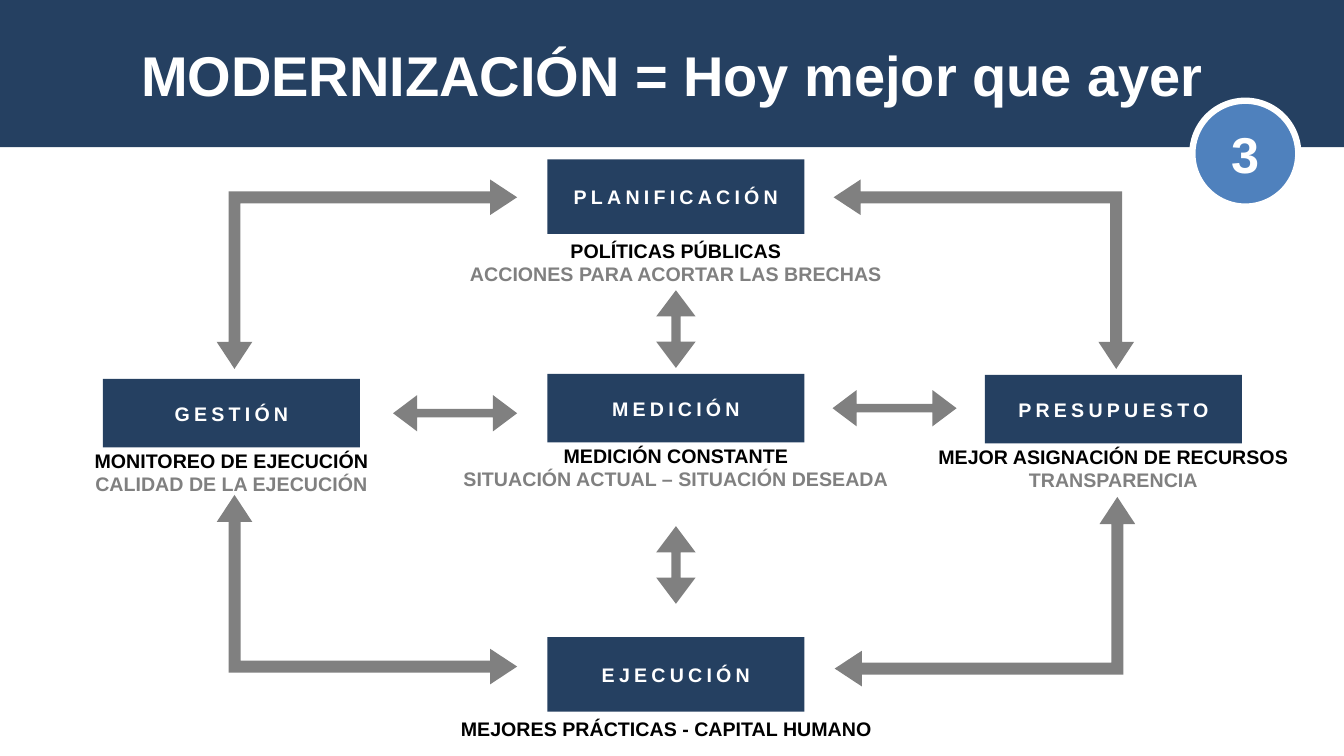
from dataclasses import dataclass

from pptx import Presentation
from pptx.dml.color import RGBColor
from pptx.enum.shapes import MSO_SHAPE
from pptx.enum.text import MSO_ANCHOR, PP_ALIGN
from pptx.oxml.ns import qn
from pptx.util import Inches, Pt

RECTANGLE, ELLIPSE = MSO_SHAPE.RECTANGLE, MSO_SHAPE.OVAL
CORNER, STRAIGHT = MSO_SHAPE.LEFT_UP_ARROW, MSO_SHAPE.LEFT_RIGHT_ARROW
LEFT, CENTER = PP_ALIGN.LEFT, PP_ALIGN.CENTER
TOP, MIDDLE = MSO_ANCHOR.TOP, MSO_ANCHOR.MIDDLE

FONT = "Arial"
NAVY, BLUE, GRAY, WHITE, BLACK = "254061", "4F81BD", "808080", "FFFFFF", "000000"

# The grid has 100 columns and 100 rows.
SLIDE_WIDTH, SLIDE_HEIGHT = Inches(13.33), Inches(7.5)
COLUMN, ROW = SLIDE_WIDTH / 100, SLIDE_HEIGHT / 100
LEFT_AXIS, MIDDLE_AXIS, RIGHT_AXIS = 17.22, 50.29, 82.84
BOX_WIDTH, TALL, SHORT = 19.13, 9.87, 9.07
LINE_HEIGHT, CAPTION_PADDING = 3.07, 1.46
BANNER_HEIGHT = 19.47


@dataclass
class Area:
    """A rectangle on the grid, given by its centre and size."""
    x: float
    y: float
    width: float
    height: float

    def bounds(self) -> tuple[int, int, int, int]:
        return (round((self.x - self.width / 2) * COLUMN),
                round((self.y - self.height / 2) * ROW),
                round(self.width * COLUMN), round(self.height * ROW))


@dataclass
class Step:
    title: str
    axis: float
    top: float
    height: float
    caption: list[str]
    caption_width: float
    caption_shift: float = 0
    overlap: float = 0


@dataclass
class ArrowStyle:
    kind: MSO_SHAPE
    width: float
    height: float
    adjustments: tuple[float, ...]


@dataclass
class Arrow:
    style: ArrowStyle
    x: float
    y: float
    rotation: int = 0
    flipped: bool = False


STEPS = [
    Step("PLANIFICACIÓN", MIDDLE_AXIS, 21.07, TALL,
         ["POLÍTICAS PÚBLICAS", "ACCIONES PARA ACORTAR LAS BRECHAS"], 49.2),
    Step("GESTIÓN", LEFT_AXIS, 50.13, SHORT,
         ["MONITOREO DE EJECUCIÓN", "CALIDAD DE LA EJECUCIÓN"], 25.13, overlap=0.53),
    Step("MEDICIÓN", MIDDLE_AXIS, 49.47, SHORT,
         ["MEDICIÓN CONSTANTE", "SITUACIÓN ACTUAL – SITUACIÓN DESEADA"], 34.8,
         overlap=0.53),
    Step("PRESUPUESTO", RIGHT_AXIS, 49.6, SHORT,
         ["MEJOR ASIGNACIÓN DE RECURSOS", "TRANSPARENCIA"], 27.75, overlap=0.53),
    Step("EJECUCIÓN", MIDDLE_AXIS, 84.27, TALL,
         ["MEJORES PRÁCTICAS - CAPITAL HUMANO"], 38.25, caption_shift=-0.71),
]

BENT = ArrowStyle(CORNER, 14.1, 39.73, (0.063, 0.094, 0.143))
ACROSS = ArrowStyle(STRAIGHT, 9.23, 4.8, (0.236, 0.665))
UPRIGHT = ArrowStyle(STRAIGHT, 5.78, 5.2, (0.236, 0.665))
ARROWS = [
    Arrow(BENT, 27.3, 36.27, 90, flipped=True),
    Arrow(BENT, 73.2, 36.27, 270),
    Arrow(BENT, 27.3, 78, 90),
    Arrow(BENT, 73.28, 78.27, 270, flipped=True),
    Arrow(ACROSS, 33.86, 54.67),
    Arrow(ACROSS, 66.56, 54),
    Arrow(UPRIGHT, MIDDLE_AXIS, 43.53, 90),
    Arrow(UPRIGHT, MIDDLE_AXIS, 74.73, 90),
]


def color(code: str) -> RGBColor:
    return RGBColor.from_string(code)


def write(box, lines: list[str], *, size: float = 14, colors: tuple[str, ...] = (WHITE,),
          align=CENTER, anchor=MIDDLE, wrap: bool = True, spacing: float = 0) -> None:
    """Fill a box with one paragraph per line; each line takes its own colour."""
    frame = box.text_frame
    frame.word_wrap = wrap
    frame.vertical_anchor = anchor
    for index, (line, code) in enumerate(zip(lines, colors)):
        para = frame.add_paragraph() if index else frame.paragraphs[0]
        para.alignment = align
        span = para.add_run()
        span.text = line
        span.font.name = FONT
        span.font.size = Pt(size)
        span.font.bold = True
        span.font.color.rgb = color(code)
        if spacing:
            span.font._element.set("spc", str(round(spacing * 100)))


def add_shape(page, kind, area: Area, fill: str):
    shape = page.shapes.add_shape(kind, *area.bounds())
    shape.shadow.inherit = False
    shape.fill.solid()
    shape.fill.fore_color.rgb = color(fill)
    shape.line.fill.background()
    return shape


def add_text(page, area: Area, lines: list[str], **text_format) -> None:
    write(page.shapes.add_textbox(*area.bounds()), lines, **text_format)


def add_step(page, step: Step) -> None:
    box_area = Area(step.axis, step.top + step.height / 2, BOX_WIDTH, step.height)
    write(add_shape(page, RECTANGLE, box_area, NAVY), [step.title], spacing=3)
    height = len(step.caption) * LINE_HEIGHT + CAPTION_PADDING
    caption_top = step.top + step.height - step.overlap
    caption_area = Area(step.axis + step.caption_shift, caption_top + height / 2,
                        step.caption_width, height)
    add_text(page, caption_area, step.caption, colors=(BLACK, GRAY), anchor=TOP)


def add_arrow(page, arrow: Arrow) -> None:
    style = arrow.style
    shape = add_shape(page, style.kind,
                      Area(arrow.x, arrow.y, style.width, style.height), GRAY)
    for index, value in enumerate(style.adjustments):
        shape.adjustments[index] = value
    shape.rotation = arrow.rotation
    if arrow.flipped:
        shape._element.spPr.find(qn("a:xfrm")).set("flipH", "1")


def add_badge(page, number: str) -> None:
    x, y = 92.66, 20.33
    circle = add_shape(page, ELLIPSE, Area(x, y, 7.88, 14), BLUE)
    circle.line.color.rgb = color(WHITE)
    circle.line.width = Pt(4.5)
    add_text(page, Area(x, y, 3.6, 9.47), [number], size=36, align=LEFT,
             anchor=TOP, wrap=False)


def main() -> None:
    deck = Presentation()
    deck.slide_width, deck.slide_height = SLIDE_WIDTH, SLIDE_HEIGHT
    page = deck.slides.add_slide(deck.slide_layouts[6])
    add_shape(page, RECTANGLE, Area(50, BANNER_HEIGHT / 2, 100, BANNER_HEIGHT), NAVY)
    add_text(page, Area(50, 9.8, 100, 16.67),
             ["MODERNIZACIÓN = Hoy mejor que ayer"], size=40)
    for step in STEPS:
        add_step(page, step)
    for arrow in ARROWS:
        add_arrow(page, arrow)
    add_badge(page, "3")
    deck.save("out.pptx")


if __name__ == "__main__":
    main()
